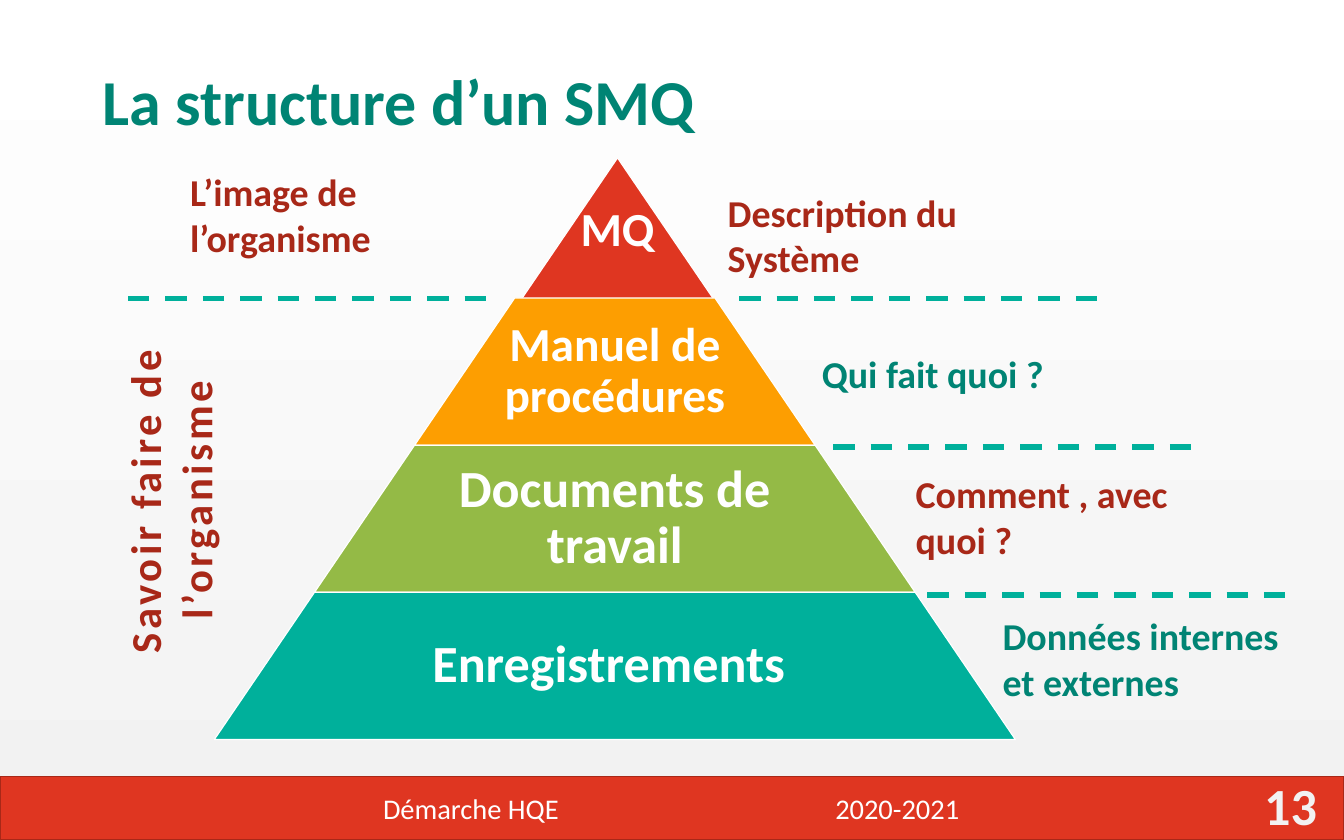
from lxml import etree
from pptx import Presentation
from pptx.dml.color import RGBColor
from pptx.enum.dml import MSO_LINE
from pptx.enum.shapes import MSO_CONNECTOR, MSO_SHAPE
from pptx.enum.text import MSO_ANCHOR, PP_ALIGN
from pptx.oxml.ns import qn
from pptx.util import Cm, Pt

DASH = MSO_LINE.DASH
STRAIGHT = MSO_CONNECTOR.STRAIGHT
RECT = MSO_SHAPE.RECTANGLE
MIDDLE, TOP = MSO_ANCHOR.MIDDLE, MSO_ANCHOR.TOP
LEFT, CENTER, RIGHT = PP_ALIGN.LEFT, PP_ALIGN.CENTER, PP_ALIGN.RIGHT

WHITE = RGBColor(0xFF, 0xFF, 0xFF)
PALE = RGBColor(0xF2, 0xF2, 0xF2)
RED = RGBColor(0xDF, 0x36, 0x21)
BRICK = RGBColor(0xA8, 0x28, 0x18)
ORANGE = RGBColor(0xFD, 0x9E, 0x01)
GREEN = RGBColor(0x94, 0xBA, 0x46)
TEAL = RGBColor(0x00, 0xB0, 0x9B)
PINE = RGBColor(0x00, 0x84, 0x74)


def write(shape, text, size, color, align=LEFT, anchor=TOP, bold=True):
    """Put one wrapped, styled paragraph in the shape and return it."""
    frame = shape.text_frame
    frame.word_wrap = True
    frame.vertical_anchor = anchor
    para = frame.paragraphs[0]
    para.text = text
    para.alignment = align
    font = para.font
    font.name, font.size, font.bold = "Calibri", Pt(size), bold
    font.color.rgb = color
    return para


def paint(shape, fill, edge):
    shape.shadow.inherit = False
    shape.fill.solid()
    shape.fill.fore_color.rgb = fill
    shape.line.color.rgb = edge
    shape.line.width = Pt(1)


deck = Presentation()
deck.slide_width, deck.slide_height = Cm(40), Cm(25)
slide = deck.slides.add_slide(deck.slide_layouts[6])
shapes = slide.shapes

back = slide.background.fill
back.gradient()
back.gradient_angle = 270
for stop, color in zip(back.gradient_stops, (WHITE, PALE)):
    stop.color.rgb = color

# Footer: the second entry starts at a tab stop
footer = shapes.add_shape(RECT, 0, Cm(23.1), Cm(40), Cm(1.9))
paint(footer, RED, BRICK)
footer.text_frame.margin_left = Cm(11.4)
para = footer.text_frame.paragraphs[0]
tabs = etree.SubElement(para._p.get_or_add_pPr(), qn("a:tabLst"))
etree.SubElement(tabs, qn("a:tab"), pos=str(Cm(13.46)), algn="l")
write(footer, "Démarche HQE\t2020-2021", 24, WHITE, anchor=MIDDLE, bold=False)

number = shapes.add_textbox(Cm(37), Cm(23.3), Cm(2.45), Cm(1.32))
write(number, "13", 44, PALE, RIGHT, MIDDLE)

title = shapes.add_textbox(Cm(2.75), Cm(1.32), Cm(34.5), Cm(3.58))
title.text_frame.margin_left = Cm(0.3)
write(title, "La structure d’un SMQ", 54, PINE, anchor=MIDDLE).line_spacing = 0.9

# Pyramid: each tier is one step wider on both sides than the one above
TALL, STEP = 4.38, 2.98
tiers = [
    ("MQ", 40, RED, 18.38, 4.7, 0.15),
    ("Manuel de procédures", 40, ORANGE, 18.3, 8.87, 2.24),
    ("Documents de travail", 44, GREEN, 18.3, 13.25, 3.28),
    ("Enregistrements ", 44, TEAL, 18.3, 17.63, 4.32),
]
for i, (text, size, color, mid, top, inset) in enumerate(tiers):
    narrow, wide = STEP * i, STEP * (i + 1)
    low = Cm(top + TALL)
    path = shapes.build_freeform(Cm(mid - wide), low)
    path.add_line_segments([
        (Cm(mid - narrow), Cm(top)),
        (Cm(mid + narrow), Cm(top)),
        (Cm(mid + wide), low),
    ])
    tier = path.convert_to_shape()
    paint(tier, color, WHITE)
    frame = tier.text_frame
    frame.margin_left = frame.margin_right = Cm(inset)
    frame.margin_top = frame.margin_bottom = Cm(0.15)
    write(tier, text, size, WHITE, CENTER, MIDDLE).line_spacing = 0.9

# Dashed rules at the tier borders
rules = [(3.81, 8.89)] + [(22 + 2.8 * i, 8.89 + 4.41 * i) for i in range(3)]
for x, y in rules:
    rule = shapes.add_connector(STRAIGHT, Cm(x), Cm(y), Cm(x + 11), Cm(y))
    rule.line.color.rgb = TEAL
    rule.line.width = Pt(4.5)
    rule.line.dash_style = DASH
    etree.SubElement(rule._element.spPr, qn("a:effectLst"))

labels = [
    ("L’image de l’organisme", BRICK, 5.41, 4.9, 3),
    ("Description du Système", BRICK, 21.41, 5.51, 3),
    ("Qui fait quoi ?", PINE, 24.21, 10.31, 1.63),
    ("Comment , avec quoi ?", BRICK, 27, 13.89, 3),
    ("Données internes et externes", PINE, 29.59, 18.11, 3),
]
for text, color, x, y, tall in labels:
    label = shapes.add_textbox(Cm(x), Cm(y), Cm(9.2), Cm(tall))
    write(label, text, 32, color)

skill = shapes.add_textbox(Cm(3.4), Cm(9.5), Cm(3.58), Cm(10.77))
para = write(skill, "Savoir faire de l’organisme", 36, BRICK, CENTER)
skill.text_frame._txBody.bodyPr.set("vert", "vert270")
para.runs[0].font._element.set("spc", "300")

deck.save("out.pptx")
